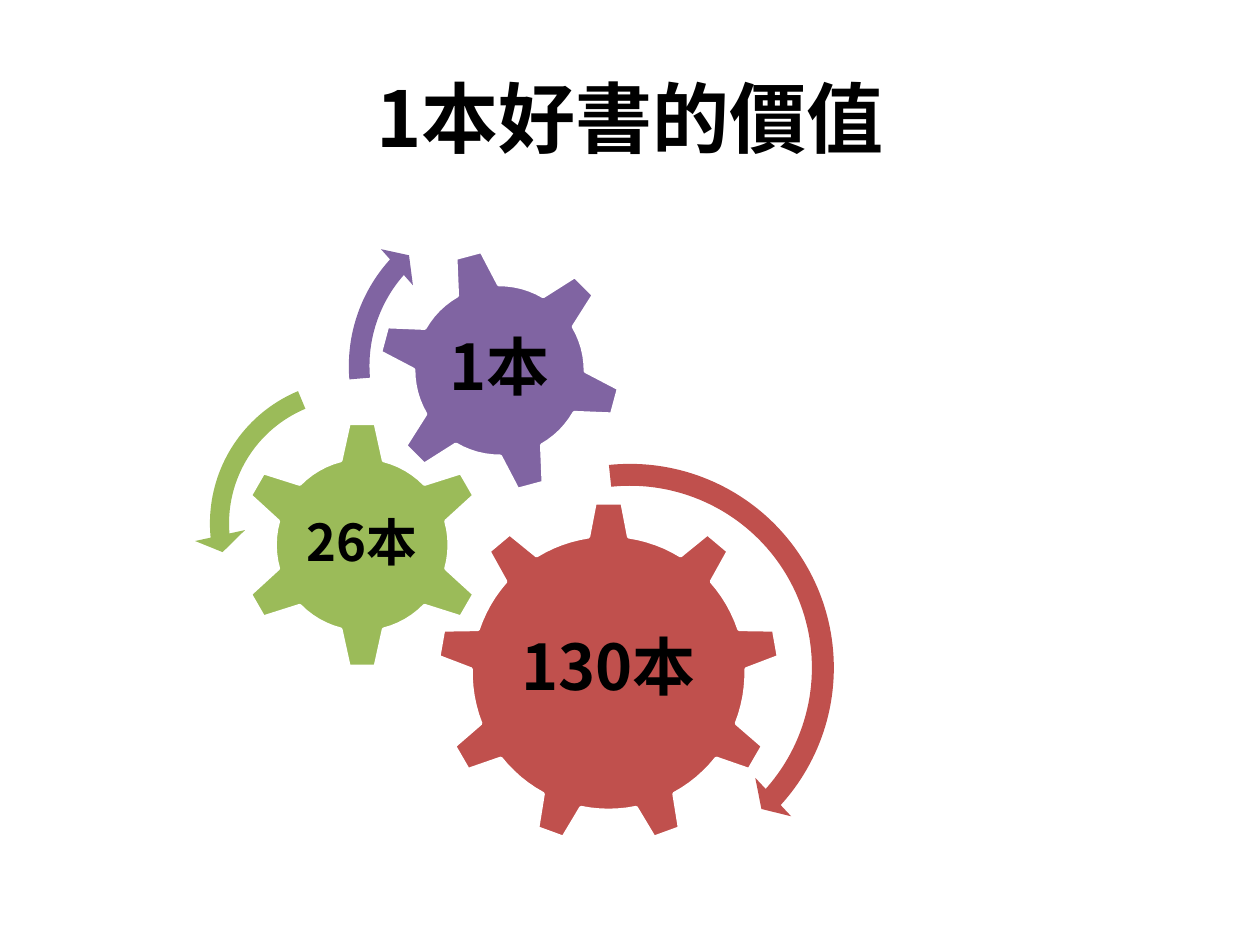
import math

import pptx
import pptx.util
import pptx.dml.color
import pptx.enum.shapes
import pptx.enum.text
import pptx.oxml.ns
from lxml import etree

RGB = pptx.dml.color.RGBColor
KIND = pptx.enum.shapes.MSO_SHAPE
BLACK = RGB(0x00, 0x00, 0x00)
WHITE = RGB(0xFF, 0xFF, 0xFF)
RED = RGB(0xC0, 0x50, 0x4D)
GREEN = RGB(0x9B, 0xBB, 0x59)
PURPLE = RGB(0x80, 0x64, 0xA2)
FONT = "Noto Sans CJK SC"

# The slide is a square grid of 100 columns by 75 rows.
COLS, ROWS = 100, 75
STEPS = 6  # segments in the rim between two teeth


def cell(n):
    return pptx.util.Inches(n / 10)


def apply(item, form):
    for key, value in form.items():
        setattr(item, key, value)


def write(shape, text, size, space=1.0, pad=(0.1, 0.05)):
    """Centre one bold line in a shape; pad is side and top inset in inches."""
    side, top = (pptx.util.Inches(p) for p in pad)
    apply(shape.text_frame, {
        "word_wrap": True,
        "vertical_anchor": pptx.enum.text.MSO_ANCHOR.MIDDLE,
        "margin_left": side, "margin_right": side,
        "margin_top": top, "margin_bottom": top,
    })
    para = shape.text_frame.paragraphs[0]
    apply(para, {"alignment": pptx.enum.text.PP_ALIGN.CENTER,
                 "line_spacing": space})
    run = para.add_run()
    run.text = text
    apply(run.font, {"name": FONT, "size": pptx.util.Pt(size), "bold": True})
    run.font.color.rgb = BLACK
    east = etree.SubElement(run.font._element, pptx.oxml.ns.qn("a:ea"))
    east.set("typeface", FONT)


def paint(shape, color):
    shape.shadow.inherit = False
    shape.fill.solid()
    shape.fill.fore_color.rgb = color


def outline(mid, teeth, turn, root, tip):
    """Points of a gear; root and tip are (half width, distance) of a tooth."""
    rim = math.hypot(*root)
    half = math.atan2(*root)
    pitch = math.tau / teeth
    points = []

    def place(across, out, angle):
        points.append((
            cell(mid[0] + across * math.cos(angle) + out * math.sin(angle)),
            cell(mid[1] + across * math.sin(angle) - out * math.cos(angle))))

    for i in range(teeth):
        angle = math.radians(turn) + i * pitch
        place(-root[0], root[1], angle)
        place(-tip[0], tip[1], angle)
        place(*tip, angle)
        for step in range(STEPS):
            place(0, rim, angle + half + (pitch - 2 * half) * step / STEPS)
    return points


def add_gear(slide, color, text, size, area, **form):
    """Draw a gear whose text fills an area of the given columns and rows."""
    first, *rest = outline(**form)
    pen = slide.shapes.build_freeform(*first)
    pen.add_line_segments(rest, close=True)
    gear = pen.convert_to_shape()
    paint(gear, color)
    gear.line.color.rgb = WHITE
    gear.line.width = pptx.util.Pt(2)
    pad = [(full - cell(part)) / 2 / cell(10)
           for full, part in zip((gear.width, gear.height), area)]
    write(gear, text, size, 0.9, pad)


def add_arrow(slide, kind, color, left, top, size, bends):
    arrow = slide.shapes.add_shape(
        kind, cell(left), cell(top), cell(size), cell(size))
    paint(arrow, color)
    arrow.line.fill.background()
    for i, bend in enumerate(bends):
        arrow.adjustments[i] = bend


def add_title(slide, text):
    box = slide.shapes.add_textbox(cell(5), cell(3), cell(90), cell(12.5))
    write(box, text, 44)


def main():
    deck = pptx.Presentation()
    deck.slide_width, deck.slide_height = cell(COLS), cell(ROWS)
    slide = deck.slides.add_slide(deck.slide_layouts[6])
    add_title(slide, "1本好書的價值")

    add_gear(slide, RED, "130本", 36, (15.2, 12.9), mid=(48.3, 53.4),
             teeth=9, turn=0, root=(1.6, 10.8), tip=(1.08, 13.5))
    add_gear(slide, GREEN, "26本", 29, (9, 9), mid=(28.75, 43.25),
             teeth=6, turn=0, root=(1.7, 6.7), tip=(1.05, 9.65))
    add_gear(slide, PURPLE, "1本", 36, (10, 10), mid=(39.65, 29.4),
             teeth=6, turn=-15, root=(1.7, 6.6), tip=(1.05, 9.5))

    add_arrow(slide, KIND.CIRCULAR_ARROW, RED, 32.6, 35.6, 34.8,
              (0.05, 2.99, 25.24, 158.45, 0.06))
    add_arrow(slide, KIND.LEFT_CIRCULAR_ARROW, GREEN, 15.4, 28.9, 25.3,
              (0.06, 4.3, 104.89, 148.38, 0.08))
    add_arrow(slide, KIND.CIRCULAR_ARROW, PURPLE, 26.6, 15.4, 27.3,
              (0.06, 3.94, 133.14, 105.08, 0.07))
    deck.save("out.pptx")


if __name__ == "__main__":
    main()
